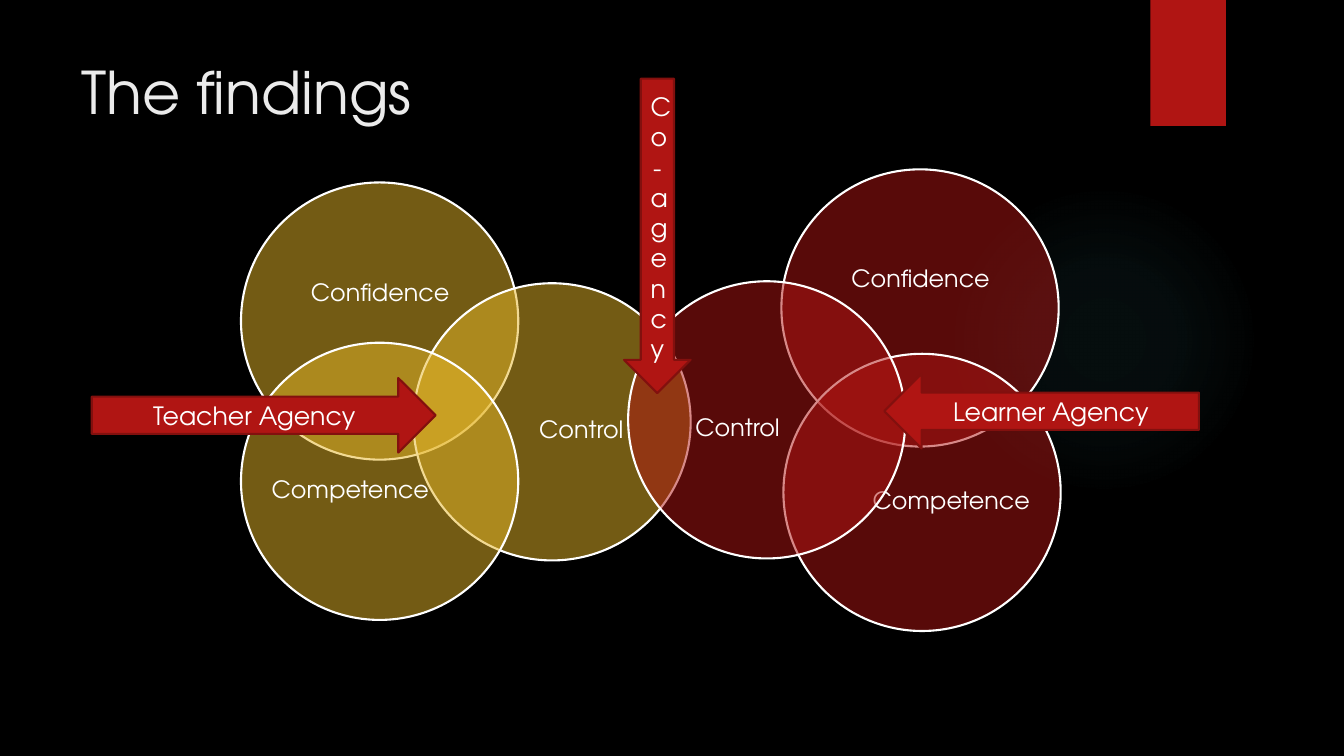
import pptx
import pptx.util
import pptx.oxml
import pptx.oxml.ns
import pptx.dml.color
import pptx.enum.shapes
import pptx.enum.text
from dataclasses import dataclass
from lxml import etree

Inches, Pt = pptx.util.Inches, pptx.util.Pt
SHAPE = pptx.enum.shapes.MSO_SHAPE
ANCHOR = pptx.enum.text.MSO_ANCHOR
CENTER = pptx.enum.text.PP_ALIGN.CENTER
qn = pptx.oxml.ns.qn


@dataclass(frozen=True)
class Theme:
    font: str = "TeX Gyre Adventor"
    background: str = "000000"
    red: str = "B01513"
    dark_red: str = "82100E"
    gold: str = "E6B729"
    glow: str = "50B9C1"
    heading: str = "EBEBEB"
    white: str = "FFFFFF"
    title_size: int = 42
    label_size: int = 17
    arrow_size: int = 18
    outline: float = 1.5


theme = Theme()

# Content
title = "The findings"
circle_size = 2.75
# Label boxes, measured from the corner of their circle
label_areas = {
    "top": (0.37, 0.48, 2.02, 1.24),
    "right": (0.84, 0.71, 1.65, 1.51),
    "left": (0.26, 0.71, 1.65, 1.51),
}
# Each agency: colour and circles (label, left, top, label area), back to front
agencies = [
    (theme.gold, [("Confidence", 2.39, 1.81, "top"),
                  ("Control", 4.1, 2.81, "right"),
                  ("Competence", 2.39, 3.4, "left")]),
    (theme.red, [("Confidence", 7.75, 1.68, "top"),
                 ("Competence", 7.77, 3.51, "right"),
                 ("Control", 6.23, 2.79, "left")]),
]
arrows = [
    ("Teacher Agency", SHAPE.RIGHT_ARROW, (0.91, 3.75, 3.41, 0.74)),
    ("Learner Agency", SHAPE.LEFT_ARROW, (8.77, 3.71, 3.12, 0.74)),
    ("Co- agency", SHAPE.DOWN_ARROW, (6.19, 0.78, 0.66, 3.12)),
]
glow_area = (9.41, 1.83, 3.08, 3.08)
glow_stops = [(0, 7), (36, 6), (69, 0), (100, 0)]  # position %, opacity %
ribbon_area = (11.41, 0, 0.75, 1.25)
title_area = (0.71, 0.5, 10.29, 1.53)

presentation = pptx.Presentation()
presentation.slide_width = Inches(13.33)
presentation.slide_height = Inches(7.5)
slide = presentation.slides.add_slide(presentation.slide_layouts[6])


def rgb(value):
    return pptx.dml.color.RGBColor.from_string(value)


def add_figure(kind, area, color, line=None, opacity=100):
    figure = slide.shapes.add_shape(kind, *map(Inches, area))
    figure.shadow.inherit = False
    figure.fill.solid()
    figure.fill.fore_color.rgb = rgb(color)
    if opacity < 100:
        tint = figure.fill._xPr.find(qn("a:solidFill"))[0]
        etree.SubElement(tint, qn("a:alpha")).set("val", str(opacity * 1000))
    if line:
        figure.line.color.rgb = rgb(line)
        figure.line.width = Pt(theme.outline)
    else:
        figure.line.fill.background()
    return figure


def write(holder, text, size, color, align=None, anchor=ANCHOR.TOP):
    frame = holder.text_frame
    frame.word_wrap = True
    frame.vertical_anchor = anchor
    paragraph = frame.paragraphs[0]
    paragraph.text = text
    paragraph.alignment = align
    font = paragraph.font
    font.name, font.size, font.color.rgb = theme.font, Pt(size), rgb(color)
    return frame


def add_text(area, *style):
    return write(slide.shapes.add_textbox(*map(Inches, area)), *style)


# Background with a faint radial glow
slide.background.fill.solid()
slide.background.fill.fore_color.rgb = rgb(theme.background)
glow = add_figure(SHAPE.OVAL, glow_area, theme.glow)
stops = "".join(
    f'<a:gs pos="{position * 1000}"><a:srgbClr val="{theme.glow}">'
    f'<a:alpha val="{opacity * 1000}"/></a:srgbClr></a:gs>'
    for position, opacity in glow_stops)
radial = pptx.oxml.parse_xml(
    f'<a:gradFill {pptx.oxml.ns.nsdecls("a")}><a:gsLst>{stops}</a:gsLst>'
    '<a:path path="circle"><a:fillToRect l="50000" t="50000" r="50000" b="50000"/>'
    '</a:path></a:gradFill>')
glow_properties = glow.fill._xPr
glow_properties.replace(glow_properties.find(qn("a:solidFill")), radial)

# Ribbon and title
add_figure(SHAPE.RECTANGLE, ribbon_area, theme.red)
add_text(title_area, title, theme.title_size, theme.heading)

# Overlapping circles with their labels
for color, circles in agencies:
    for label, left, top, place in circles:
        add_figure(SHAPE.OVAL, (left, top, circle_size, circle_size),
                   color, theme.white, opacity=50)
        dx, dy, width, height = label_areas[place]
        frame = add_text((left + dx, top + dy, width, height), label,
                         theme.label_size, theme.white, CENTER, ANCHOR.MIDDLE)
        frame.margin_left = frame.margin_right = 0
        frame.margin_top = frame.margin_bottom = 0
        frame.paragraphs[0].line_spacing = 0.9

# Agency arrows
for label, kind, area in arrows:
    arrow = add_figure(kind, area, theme.red, theme.dark_red)
    write(arrow, label, theme.arrow_size, theme.white, CENTER, ANCHOR.MIDDLE)

presentation.save("out.pptx")
